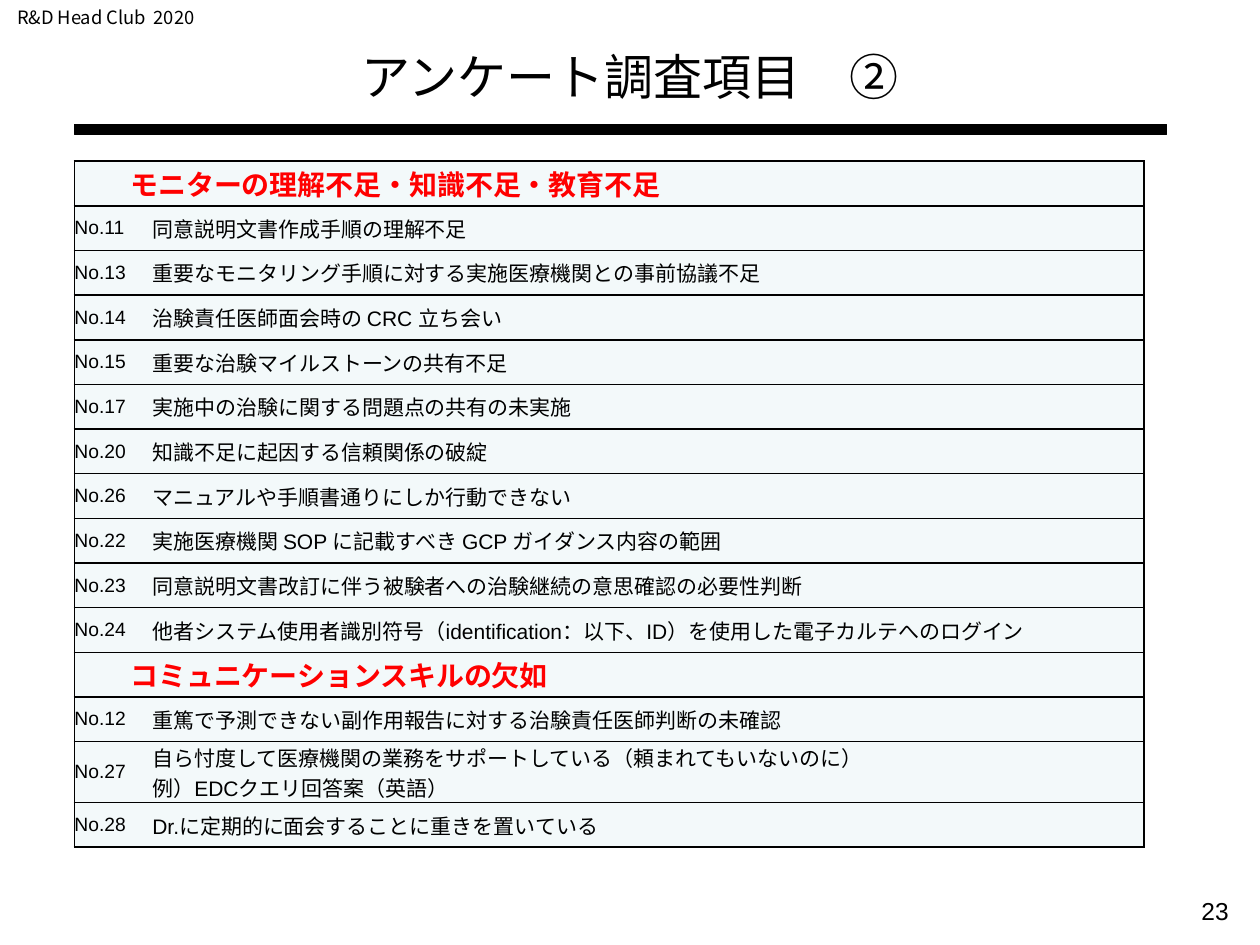
"""Build a survey item slide with one table of numbered questions in two groups."""
from lxml import etree
from pptx import Presentation
from pptx import util as u
from pptx.dml.color import RGBColor
from pptx.enum import shapes, text
from pptx.oxml import ns

Cm = u.Cm
BLACK, RED, PALE = "000000", "FF0000", "F3F9FA"
JAPANESE_FONT = "Noto Sans CJK JP"


def add_run(paragraph, wording, size, color=BLACK, bold=False, font="Arial"):
    run = paragraph.add_run()
    run.text = wording
    run.font.size = u.Pt(size)
    run.font.bold = bold
    run.font.name = font
    run.font.color.rgb = RGBColor.from_string(color)
    east_asian = etree.Element(ns.qn("a:ea"), typeface=JAPANESE_FONT)
    run.font._element.find(ns.qn("a:latin")).addnext(east_asian)


def format_cell(cell, sides):
    cell.margin_left = cell.margin_right = cell.margin_top = cell.margin_bottom = 0
    cell.vertical_anchor = text.MSO_ANCHOR.MIDDLE
    properties = cell._tc.get_or_add_tcPr()
    for side in "LRTB":
        line = etree.SubElement(properties, ns.qn("a:ln" + side), w=str(u.Pt(1)))
        if side in sides:
            fill = etree.SubElement(line, ns.qn("a:solidFill"))
            etree.SubElement(fill, ns.qn("a:srgbClr"), val=BLACK)
        else:
            etree.SubElement(line, ns.qn("a:noFill"))
    cell.fill.solid()
    cell.fill.fore_color.rgb = RGBColor.from_string(PALE)


presentation = Presentation()
presentation.slide_width, presentation.slide_height = Cm(25.4), Cm(19.05)
slide = presentation.slides.add_slide(presentation.slide_layouts[5])

title = slide.shapes.title
title.left, title.top, title.width, title.height = Cm(1.27), Cm(0.76), Cm(22.86), Cm(1.55)
title.text_frame.vertical_anchor = text.MSO_ANCHOR.MIDDLE
title_paragraph = title.text_frame.paragraphs[0]
title_paragraph.alignment = text.PP_ALIGN.CENTER
add_run(title_paragraph, "アンケート調査項目　②", 28)

title_bar = slide.shapes.add_shape(
    shapes.MSO_SHAPE.RECTANGLE, Cm(1.5), Cm(2.51), Cm(22.02), Cm(0.2))
title_bar.shadow.inherit = False
title_bar.fill.solid()
title_bar.fill.fore_color.rgb = RGBColor.from_string(BLACK)
title_bar.line.color.rgb = RGBColor.from_string(BLACK)
title_bar.line.width = u.Pt(0.75)

items = [
    ("", "モニターの理解不足・知識不足・教育不足"),
    ("No.11", "同意説明文書作成手順の理解不足"),
    ("No.13", "重要なモニタリング手順に対する実施医療機関との事前協議不足"),
    ("No.14", "治験責任医師面会時の CRC 立ち会い"),
    ("No.15", "重要な治験マイルストーンの共有不足"),
    ("No.17", "実施中の治験に関する問題点の共有の未実施"),
    ("No.20", "知識不足に起因する信頼関係の破綻"),
    ("No.26", "マニュアルや手順書通りにしか行動できない"),
    ("No.22", "実施医療機関 SOP に記載すべき GCP ガイダンス内容の範囲"),
    ("No.23", "同意説明文書改訂に伴う被験者への治験継続の意思確認の必要性判断"),
    ("No.24", "他者システム使用者識別符号（identification：以下、ID）を使用した電子カルテへのログイン"),
    ("", "コミュニケーションスキルの欠如"),
    ("No.12", "重篤で予測できない副作用報告に対する治験責任医師判断の未確認"),
    ("No.27", "自ら忖度して医療機関の業務をサポートしている（頼まれてもいないのに）\n"
              "例）EDCクエリ回答案（英語）"),
    ("No.28", "Dr.に定期的に面会することに重きを置いている"),
]
row_height = Cm(0.9)
table = slide.shapes.add_table(
    len(items), 2, Cm(1.5), Cm(3.25), Cm(21.56), row_height * len(items)).table
table.first_row = table.horz_banding = False
table.columns[0].width, table.columns[1].width = Cm(1.57), Cm(19.99)

for row, (number, wording) in enumerate(items):
    table.rows[row].height = row_height
    number_cell, item_cell = table.cell(row, 0), table.cell(row, 1)
    format_cell(number_cell, "LTB" if number else "LRTB")
    format_cell(item_cell, "RTB")
    if not number:
        number_cell.merge(item_cell)
        number_cell.margin_left = Cm(1.13)
        add_run(number_cell.text_frame.paragraphs[0], wording, 16, RED, True)
        continue
    add_run(number_cell.text_frame.paragraphs[0], number, 11)
    for index, line in enumerate(wording.split("\n")):
        frame = item_cell.text_frame
        paragraph = frame.add_paragraph() if index else frame.paragraphs[0]
        add_run(paragraph, line, 12)

labels = [
    (19.1, 17.93, 5.92, 1.32, text.PP_ALIGN.RIGHT, "23", 14, "Arial"),
    (0, 0, 4.27, 0.79, text.PP_ALIGN.CENTER, "R&D Head Club  2020", 10.5, JAPANESE_FONT),
]
for left, top, width, height, alignment, wording, size, font in labels:
    label = slide.shapes.add_textbox(Cm(left), Cm(top), Cm(width), Cm(height))
    label.text_frame.word_wrap = True
    paragraph = label.text_frame.paragraphs[0]
    paragraph.alignment = alignment
    add_run(paragraph, wording, size, font=font)

presentation.save("out.pptx")
